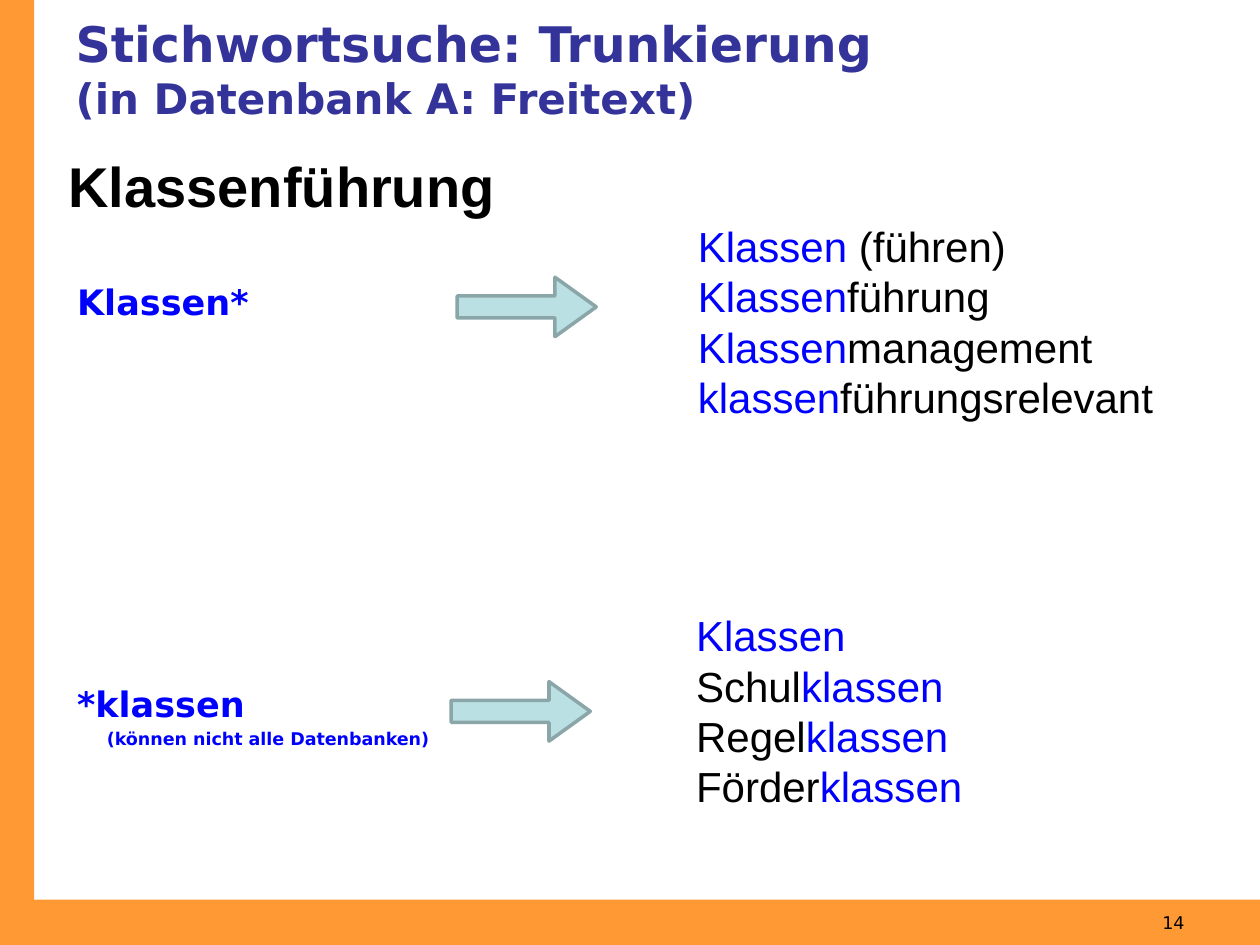
"""Build the slide on truncation in keyword searches."""
from dataclasses import dataclass

from pptx import Presentation
from pptx import util as u
from pptx.dml.color import RGBColor
from pptx.enum import shapes, text

Pt = u.Pt
ORANGE = RGBColor(0xFF, 0x99, 0x33)
INDIGO = RGBColor(0x33, 0x33, 0x99)
BLUE = RGBColor(0x00, 0x00, 0xFF)
BLACK = RGBColor(0x00, 0x00, 0x00)
PALE = RGBColor(0xBB, 0xE0, 0xE3)
TEAL = RGBColor(0x8A, 0xA6, 0xA8)
SANS, ARIAL = "DejaVu Sans", "Arial"


@dataclass(frozen=True)
class Box:
    left: float
    top: float
    width: float
    height: float

    def lengths(self) -> list:
        return [Pt(v) for v in (self.left, self.top, self.width, self.height)]


@dataclass(frozen=True)
class Run:
    text: str
    size: float
    name: str
    color: RGBColor
    bold: bool = False


@dataclass(frozen=True)
class Search:
    arrow: Box
    hits_box: Box
    hits: tuple


def add_run(p, run: Run) -> None:
    r = p.add_run()
    r.text = run.text
    formats = {"size": Pt(run.size), "name": run.name, "bold": run.bold}
    for key, value in formats.items():
        setattr(r.font, key, value)
    r.font.color.rgb = run.color


def add_text(s, box: Box, lines: list, wrap: bool = False):
    tf = s.shapes.add_textbox(*box.lengths()).text_frame
    fit = text.MSO_AUTO_SIZE.NONE if wrap else text.MSO_AUTO_SIZE.SHAPE_TO_FIT_TEXT
    for key, value in {"word_wrap": wrap, "auto_size": fit}.items():
        setattr(tf, key, value)
    for i, runs in enumerate(lines):
        p = tf.add_paragraph() if i else tf.paragraphs[0]
        for run in runs:
            add_run(p, run)
    return tf


def add_filled(s, kind, box: Box, fill: RGBColor):
    sp = s.shapes.add_shape(kind, *box.lengths())
    sp.shadow.inherit = False
    sp.fill.solid()
    sp.fill.fore_color.rgb = fill
    sp.line.fill.background()
    return sp


def add_arrow(s, box: Box) -> None:
    sp = add_filled(s, shapes.MSO_SHAPE.RIGHT_ARROW, box, PALE)
    sp.adjustments[0], sp.adjustments[1] = 0.371, 0.694
    sp.line.color.rgb = TEAL
    sp.line.width = Pt(2)


def add_title(s) -> None:
    sp = s.shapes.title
    for key, value in zip(("left", "top", "width", "height"), Box(36, 4.3, 664.6, 67.7).lengths()):
        setattr(sp, key, value)
    tf = sp.text_frame
    formats = {"vertical_anchor": text.MSO_ANCHOR.TOP, "word_wrap": True,
               "auto_size": text.MSO_AUTO_SIZE.NONE}
    for key, value in formats.items():
        setattr(tf, key, value)
    p = tf.paragraphs[0]
    p.alignment = text.PP_ALIGN.LEFT
    add_run(p, Run("Stichwortsuche: Trunkierung", 28, SANS, INDIGO, True))
    p.add_line_break()
    add_run(p, Run("(in Datenbank A: Freitext)", 24, SANS, INDIGO, True))


def add_terms(s) -> None:
    terms = (("Klassen*", 20), ("*klassen", 20), ("(können nicht alle Datenbanken)", 10))
    lines = [[Run(term, size, SANS, BLUE, True)] for term, size in terms]
    tf = add_text(s, Box(37, 156.8, 668.9, 345), lines, wrap=True)
    _, suffix, remark = tf.paragraphs
    suffix.space_before = Pt(205.5)
    remark.space_before = Pt(2)
    remark._p.get_or_add_pPr().set("marL", str(Pt(17)))


def add_search(s, search: Search) -> None:
    stem = "klassen"
    lines = [[Run(part, 24, ARIAL, BLUE if part.lower().strip() == stem else BLACK)
              for part in hit] for hit in search.hits]
    add_text(s, search.hits_box, lines)
    add_arrow(s, search.arrow)


SEARCHES = (
    Search(Box(261.2, 158.4, 79.5, 34), Box(391.7, 122.4, 277.9, 123.8),
           (("Klassen ", "(führen)"), ("Klassen", "führung"),
            ("Klassen", "management"), ("klassen", "führungsrelevant"))),
    Search(Box(257.8, 389.5, 79.5, 34), Box(390.7, 344.9, 168.5, 123.8),
           (("Klassen",), ("Schul", "klassen"), ("Regel", "klassen"),
            ("Förder", "klassen"))),
)


def main() -> None:
    prs = Presentation()
    prs.slide_width, prs.slide_height = Pt(720), Pt(540)
    s = prs.slides.add_slide(prs.slide_layouts[5])
    for box in (Box(0, 514, 720, 26), Box(0, 0, 19.5, 532)):
        add_filled(s, shapes.MSO_SHAPE.RECTANGLE, box, ORANGE)
    tf = add_text(s, Box(516.2, 514, 167.8, 26), [[Run("14", 10, SANS, BLACK)]], wrap=True)
    tf.vertical_anchor = text.MSO_ANCHOR.MIDDLE
    tf.paragraphs[0].alignment = text.PP_ALIGN.RIGHT
    add_title(s)
    add_terms(s)
    for search in SEARCHES:
        add_search(s, search)
    add_text(s, Box(32, 82.8, 259.9, 46), [[Run("Klassenführung", 32, ARIAL, BLACK, True)]])
    prs.save("out.pptx")


if __name__ == "__main__":
    main()
